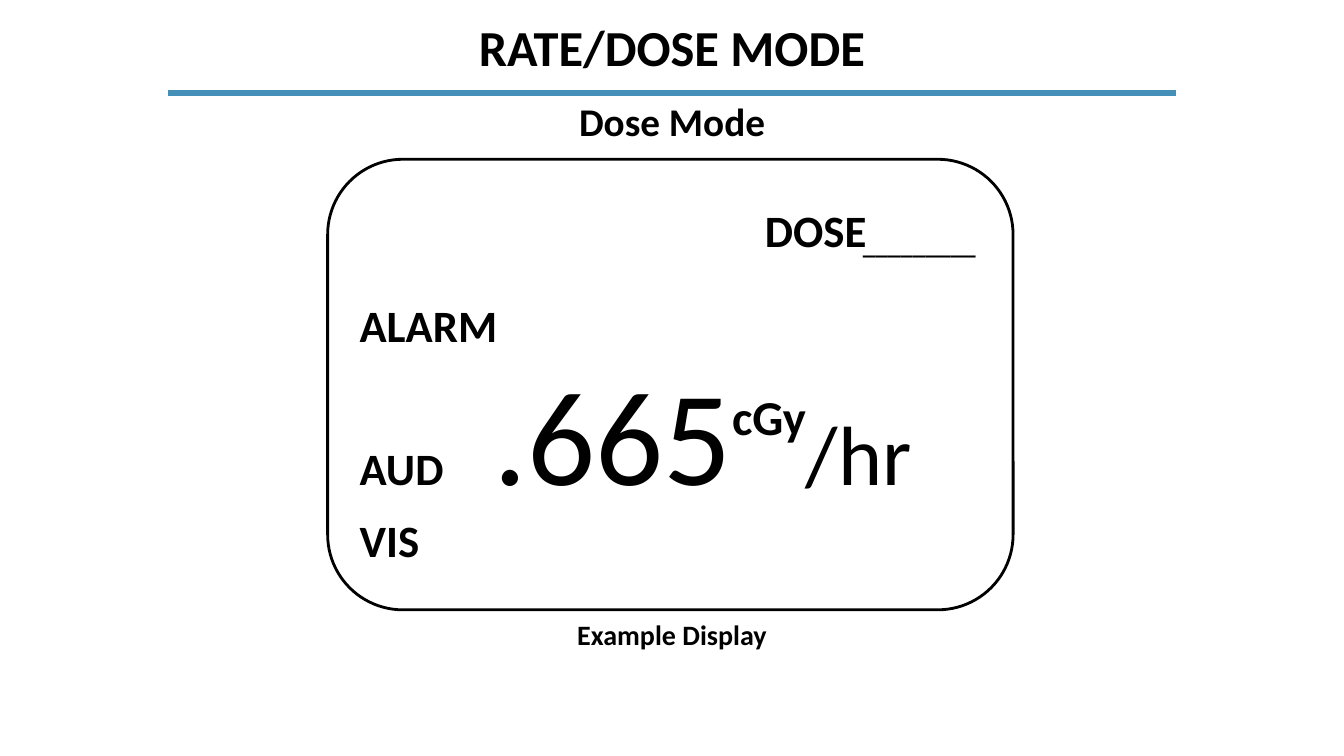
from pptx import Presentation
from pptx.dml.color import RGBColor
from pptx.enum.shapes import MSO_CONNECTOR as Connector, MSO_SHAPE as Shape
from pptx.enum.text import MSO_ANCHOR as Anchor, MSO_AUTO_SIZE as AutoSize, PP_ALIGN as Align
from pptx.oxml.ns import qn
from pptx.util import Inches, Pt
from lxml import etree


def colour(hex_text):
    return RGBColor.from_string(hex_text)


class DisplaySlide:
    """Title-only slide; lengths are percentages of the slide's size."""

    FONT = "Calibri"
    INK = "000000"
    PAPER = "FFFFFF"
    ACCENT = "4590B8"

    def __init__(self, presentation):
        self.width = presentation.slide_width
        self.height = presentation.slide_height
        self.slide = presentation.slides.add_slide(presentation.slide_layouts[5])

    def box(self, left, top, width, height):
        return (int(self.width * left / 100), int(self.height * top / 100),
                int(self.width * width / 100), int(self.height * height / 100))

    def style(self, font, size, bold=True):
        font.name = self.FONT
        font.size = Pt(size)
        font.bold = bold
        font.color.rgb = colour(self.INK)

    def fill_text(self, shape, text, size, align):
        frame = shape.text_frame
        frame.word_wrap = True
        frame.auto_size = AutoSize.SHAPE_TO_FIT_TEXT
        frame.vertical_anchor = Anchor.TOP
        paragraph = frame.paragraphs[0]
        paragraph.text = text
        paragraph.alignment = align
        self.style(paragraph.font, size)

    def title(self, text, size, *place):
        shape = self.slide.shapes.title
        shape.left, shape.top, shape.width, shape.height = self.box(*place)
        self.fill_text(shape, text, size, Align.CENTER)

    def label(self, text, size, *place, align=Align.CENTER):
        shape = self.slide.shapes.add_textbox(*self.box(*place))
        self.fill_text(shape, text, size, align)

    def rule(self, left, top, width):
        x, y, length, _ = self.box(left, top, width, 0)
        line = self.slide.shapes.add_connector(Connector.STRAIGHT, x, y, x + length, y)
        line.line.color.rgb = colour(self.ACCENT)
        line.line.width = Pt(4.5)
        etree.SubElement(line._element.spPr, qn("a:effectLst"))

    def panel(self, *place):
        """Add the rounded screen and return its text frame."""
        shape = self.slide.shapes.add_shape(Shape.ROUNDED_RECTANGLE, *self.box(*place))
        shape.shadow.inherit = False
        shape.adjustments[0] = 0.167
        shape.fill.solid()
        shape.fill.fore_color.rgb = colour(self.PAPER)
        shape.line.color.rgb = colour(self.INK)
        shape.line.width = Pt(2)
        frame = shape.text_frame
        frame.word_wrap = True
        frame.vertical_anchor = Anchor.MIDDLE
        return frame

    def reading(self, paragraph, runs, indent=0, tab=None, before=0):
        """Fill a line of the screen; runs are (text, size, bold, baseline percent)."""
        properties = paragraph._p.get_or_add_pPr()
        properties.set("marL", str(Inches(indent)))
        paragraph.alignment = Align.LEFT
        paragraph.space_before = Pt(before)
        if tab:
            stops = etree.SubElement(properties, qn("a:tabLst"))
            etree.SubElement(stops, qn("a:tab"), pos=str(Inches(tab)), algn="l")
        self.style(paragraph.font, 32)
        for text, size, bold, baseline in runs:
            run = paragraph.add_run()
            run.text = text
            self.style(run.font, size, bold)
            if baseline:
                run.font._element.set("baseline", str(baseline * 1000))


def main():
    presentation = Presentation()
    presentation.slide_width = Inches(13.33)
    presentation.slide_height = Inches(7.5)
    page = DisplaySlide(presentation)
    left, width = 12.5, 75

    page.title("RATE/DOSE MODE", 36, left, 1.47, width, 9.33)
    page.rule(left, 12.27, width)
    page.label("Dose Mode", 28, left, 12.27, width, 7.6)

    screen = page.panel(24.38, 21.07, 51, 59.6)
    lines = [
        ([("DOSE", 32, True, 0)], {"indent": 4.02}),
        ([("ALARM", 32, True, 0)], {"before": 29.3}),
        ([("AUD\t", 32, True, 0), (".665", 96, False, 0),
          ("cGy", 60, True, 60), ("/hr", 60, False, 0)], {"tab": 1.33}),
        ([("VIS", 32, True, 0)], {}),
    ]
    for index, (runs, layout) in enumerate(lines):
        paragraph = screen.add_paragraph() if index else screen.paragraphs[0]
        page.reading(paragraph, runs, **layout)

    page.label("_" * 9, 18, 63.46, 29.73, 11.93, 5.33, align=Align.LEFT)
    page.label("Example Display", 20, left, 81.07, width, 5.87)
    presentation.save("out.pptx")


if __name__ == "__main__":
    main()
